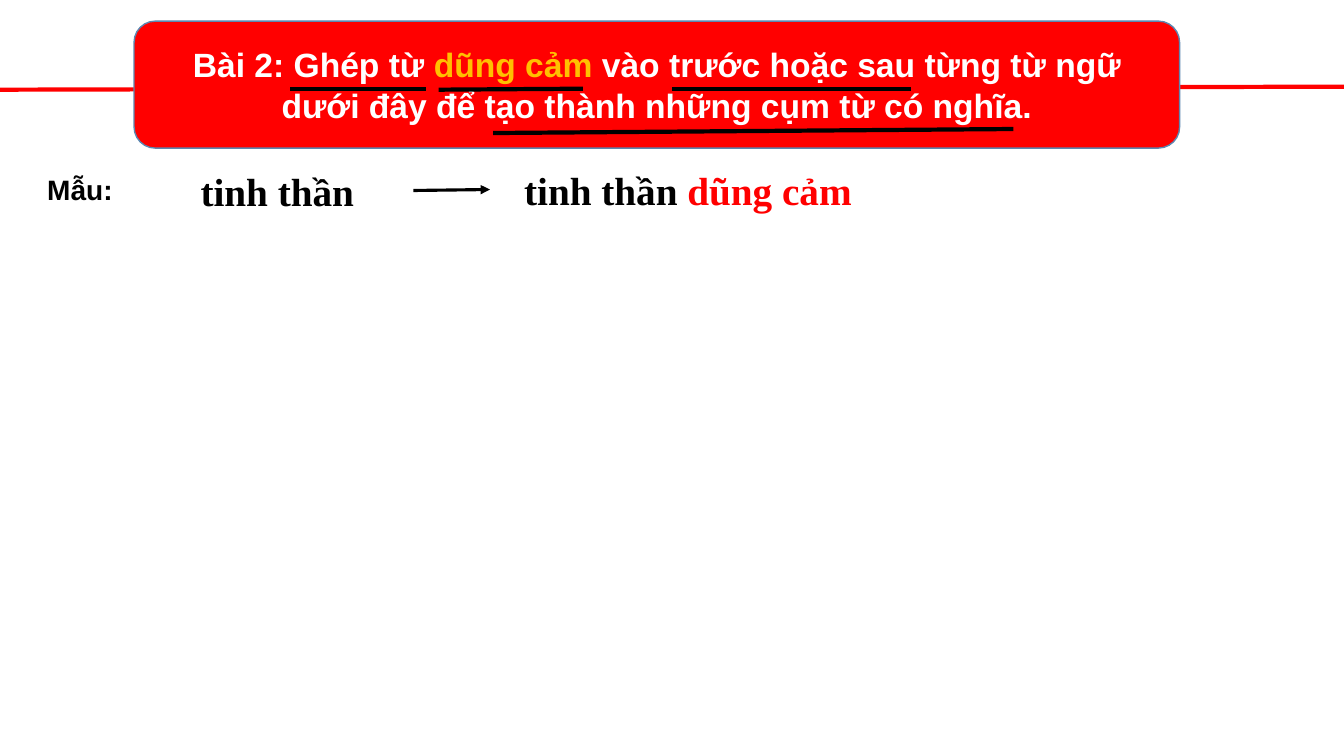
from lxml.etree import SubElement
from pptx import Presentation
from pptx.dml.color import RGBColor
from pptx.enum.shapes import MSO_CONNECTOR as Connector, MSO_SHAPE as Shape
from pptx.enum.text import MSO_ANCHOR as Anchor, MSO_AUTO_SIZE as AutoSize, PP_ALIGN as Align
from pptx.oxml.ns import qn
from pptx.util import Inches, Pt

COLORS = {
    "red": "FF0000",
    "gold": "FFC000",
    "white": "FFFFFF",
    "black": "000000",
    "border": "5C87B1",
}


class LessonSlide:
    def __init__(self, presentation, colors):
        self.colors = colors
        self.slide = presentation.slides.add_slide(presentation.slide_layouts[6])

    def color(self, name):
        return RGBColor.from_string(self.colors[name])

    def add_runs(self, shape, runs, font_format, align=Align.LEFT):
        paragraph = shape.text_frame.paragraphs[0]
        paragraph.alignment = align
        for text, color in runs:
            run = paragraph.add_run()
            run.text = text
            for name, value in font_format.items():
                setattr(run.font, name, value)
            run.font.color.rgb = self.color(color)

    def banner(self, box, runs, font_format):
        shape = self.slide.shapes.add_shape(Shape.ROUNDED_RECTANGLE, *map(Inches, box))
        shape.shadow.inherit = False
        shape.fill.solid()
        shape.fill.fore_color.rgb = self.color("red")
        shape.line.color.rgb = self.color("border")
        shape.line.width = Pt(1)
        shape.text_frame.word_wrap = True
        shape.text_frame.vertical_anchor = Anchor.MIDDLE
        self.add_runs(shape, runs, font_format, Align.CENTER)

    def text(self, box, runs, font_format):
        shape = self.slide.shapes.add_textbox(*map(Inches, box))
        shape.text_frame.word_wrap = True
        shape.text_frame.auto_size = AutoSize.SHAPE_TO_FIT_TEXT
        self.add_runs(shape, runs, font_format)

    def line(self, ends, color="black", width=3, arrow=False):
        connector = self.slide.shapes.add_connector(Connector.STRAIGHT, *map(Inches, ends))
        connector.line.color.rgb = self.color(color)
        connector.line.width = Pt(width)
        properties = connector.element.spPr
        if arrow:
            SubElement(properties.find(qn("a:ln")), qn("a:tailEnd"), type="triangle")
        SubElement(properties, qn("a:effectLst"))


def main():
    presentation = Presentation()
    presentation.slide_width = Inches(13.33)
    presentation.slide_height = Inches(7.5)
    lesson = LessonSlide(presentation, COLORS)

    title_font = {"name": "Arial", "size": Pt(24), "bold": True}
    label_font = {"name": "Arial", "size": Pt(20), "bold": True}
    example_font = {"name": "Times New Roman", "size": Pt(28), "bold": True}

    lesson.line((0, 0.89, 13.33, 0.86), "red")
    lesson.banner(
        (1.33, 0.21, 10.37, 1.26),
        [
            ("Bài 2: Ghép từ ", "white"),
            ("dũng cảm ", "gold"),
            ("vào trước hoặc sau từng từ ngữ dưới đây để tạo thành "
             "những cụm từ có nghĩa.", "white"),
        ],
        title_font,
    )
    lesson.text((0.37, 1.66, 1.35, 0.44), [("Mẫu:", "black")], label_font)
    lesson.text((1.89, 1.61, 2.22, 0.57), [("tinh thần", "black")], example_font)

    underlines = [
        (2.88, 0.88, 4.23, 0.88),
        (4.35, 0.89, 5.78, 0.88),
        (6.67, 0.88, 9.04, 0.88),
        (4.89, 1.32, 10.05, 1.28),
    ]
    for ends in underlines:
        lesson.line(ends)

    lesson.line((4.1, 1.89, 4.86, 1.88), width=2.25, arrow=True)
    lesson.text(
        (5.1, 1.6, 3.82, 0.57),
        [("tinh thần ", "black"), ("dũng cảm", "red")],
        example_font,
    )

    presentation.save("out.pptx")


if __name__ == "__main__":
    main()
